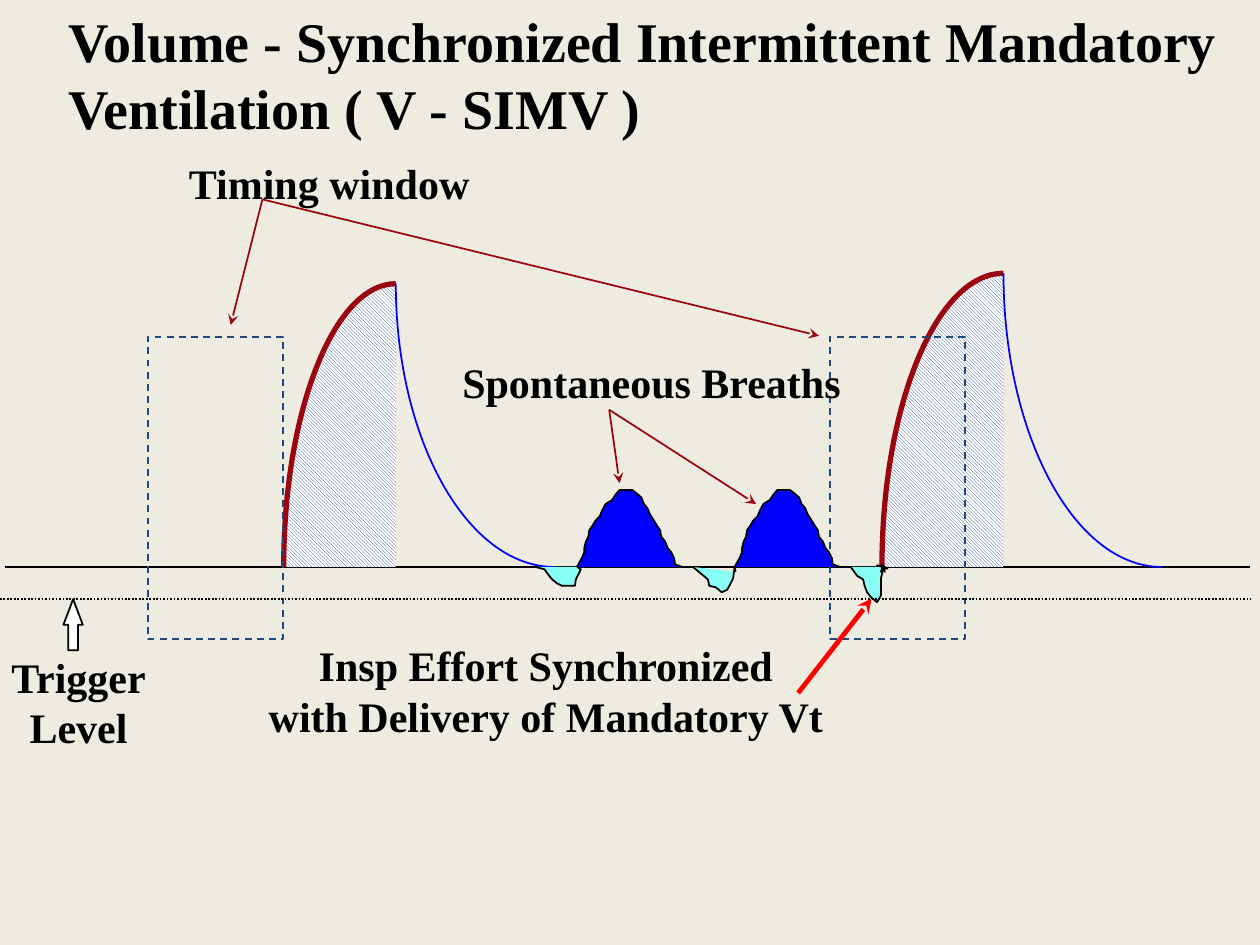
from lxml import etree
from pptx import Presentation
from pptx.dml.color import RGBColor
from pptx.enum.dml import MSO_LINE, MSO_PATTERN
from pptx.enum.shapes import MSO_CONNECTOR, MSO_SHAPE
from pptx.enum.text import MSO_ANCHOR, MSO_AUTO_SIZE, PP_ALIGN
from pptx.oxml import parse_xml
from pptx.oxml.ns import nsdecls, qn
from pptx.util import Cm, Pt

LEFT, CENTER = PP_ALIGN.LEFT, PP_ALIGN.CENTER
TOP = MSO_ANCHOR.TOP
FIT_SHAPE = MSO_AUTO_SIZE.SHAPE_TO_FIT_TEXT
DASH, DOTS = MSO_LINE.DASH, MSO_LINE.ROUND_DOT
HATCH = MSO_PATTERN.LIGHT_DOWNWARD_DIAGONAL
STRAIGHT = MSO_CONNECTOR.STRAIGHT
RECT, UP_ARROW = MSO_SHAPE.RECTANGLE, MSO_SHAPE.UP_ARROW

COLORS = {
    "background": "EEECE1", "black": "000000", "white": "FFFFFF",
    "dark_red": "9A0510", "red": "FF0000", "blue": "0000FF",
    "navy": "1F497D", "cyan": "88FFF4",
}
FONT = "Times New Roman"
BASELINE, TRIGGER = 11.43, 12.07

INSPIRATION = [(0, 100), (0, 45), (45, 0), (100, 0)]
EXPIRATION = [(100, 100), (45, 100), (0, 55), (0, 0)]

SPONTANEOUS_STARTS = (11.63, 14.81)
SPONTANEOUS = [
    (0, 0), (.1, -.18), (.15, -.3), (.15, -.38), (.18, -.51), (.23, -.61),
    (.25, -.74), (.3, -.81), (.38, -.94), (.46, -1.02), (.51, -1.14),
    (.58, -1.27), (.71, -1.35), (.79, -1.47), (.86, -1.55), (.99, -1.55),
    (1.12, -1.55), (1.22, -1.47), (1.3, -1.4), (1.35, -1.27), (1.42, -1.19),
    (1.47, -1.07), (1.55, -.94), (1.63, -.81), (1.68, -.74), (1.7, -.61),
    (1.78, -.51), (1.83, -.38), (1.9, -.3), (1.96, -.18), (1.98, -.05),
    (2.13, 0),
]
EFFORTS = {
    10.8: [(0, 0), (.18, .05), (.25, .15), (.33, .25), (.43, .33), (.53, .38),
           (.66, .38), (.79, .38), (.81, .25), (.86, .15), (.91, .05),
           (.84, 0)],
    13.97: [(0, 0), (.18, .15), (.3, .25), (.33, .38), (.46, .41), (.58, .51),
            (.69, .46), (.76, .33), (.81, .23), (.84, 0), (.86, .1)],
    17.15: [(0, 0), (.13, .18), (.25, .25), (.28, .38), (.33, .51),
            (.41, .61), (.53, .71), (.61, .58), (.61, .46), (.61, .33),
            (.61, .23), (.64, .1), (.64, 0), (.69, .1), (.64, 0), (.61, .1),
            (.64, 0), (.53, -.03), (.64, -.03), (.74, .03), (.64, .05),
            (.64, 0)],
}


def rgb(name):
    return RGBColor.from_string(COLORS[name])


def style_line(line, color, width=1, dash=None):
    line.color.rgb = rgb(color)
    line.width = Pt(width)
    if dash:
        line.dash_style = dash


def style_shape(sp, fill, color, width=1, dash=None):
    sp.shadow.inherit = False
    if fill:
        sp.fill.solid()
        sp.fill.fore_color.rgb = rgb(fill)
    else:
        sp.fill.background()
    style_line(sp.line, color, width, dash)


def write_text(tf, lines, size, align):
    settings = {"word_wrap": False, "auto_size": FIT_SHAPE,
                "vertical_anchor": TOP}
    for name, value in settings.items():
        setattr(tf, name, value)
    font = {"name": FONT, "size": Pt(size), "bold": True}
    for i, text in enumerate(lines):
        p = tf.paragraphs[0] if i == 0 else tf.add_paragraph()
        p.alignment = align
        r = p.add_run()
        r.text = text
        r.font.color.rgb = rgb("black")
        for name, value in font.items():
            setattr(r.font, name, value)


def add_title(s, box, lines):
    sp = s.shapes.title
    for name, value in zip(("left", "top", "width", "height"), box):
        setattr(sp, name, Cm(value))
    write_text(sp.text_frame, lines, 32, LEFT)


def add_label(s, box, lines, align=LEFT):
    sp = s.shapes.add_textbox(*map(Cm, box))
    write_text(sp.text_frame, lines, 24, align)


def add_box(s, kind, box, fill, color, dash=None):
    sp = s.shapes.add_shape(kind, *map(Cm, box))
    style_shape(sp, fill, color, dash=dash)
    return sp


def add_line(s, start, end, color, width=1, dash=None, arrow=False):
    sp = s.shapes.add_connector(STRAIGHT, *map(Cm, (*start, *end)))
    style_line(sp.line, color, width, dash)
    sp_pr = sp._element.spPr
    if arrow:
        etree.SubElement(sp_pr.find(qn("a:ln")), qn("a:tailEnd"),
                         type="stealth")
    etree.SubElement(sp_pr, qn("a:effectLst"))


def add_outline(s, points, fill, color, width=1):
    points = [(Cm(x), Cm(y)) for x, y in points]
    builder = s.shapes.build_freeform(*points[0])
    builder.add_line_segments(points[1:], close=False)
    sp = builder.convert_to_shape()
    style_shape(sp, fill, color, width)
    return sp


def add_wave(s, start, offsets, fill):
    add_outline(s, [(start + x, BASELINE + y) for x, y in offsets],
                fill, "black")


def curve_path(points, flags, ending=""):
    first, *rest = [f'<a:pt x="{x}" y="{y}"/>' for x, y in points]
    return parse_xml(
        f'<a:path {nsdecls("a")} w="100" h="100" {flags}>'
        f'<a:moveTo>{first}</a:moveTo>'
        f'<a:cubicBezTo>{"".join(rest)}</a:cubicBezTo>{ending}</a:path>')


def add_curve(s, left, top, width, points, color, weight, hatched=False):
    sp = add_outline(s, [(left, top), (left + width, BASELINE)],
                     None, color, weight)
    paths = sp._element.find(".//" + qn("a:pathLst"))
    paths.remove(paths[0])
    paths.append(curve_path(points, 'fill="none"'))
    if hatched:
        corner = '<a:lnTo><a:pt x="100" y="100"/></a:lnTo><a:close/>'
        paths.append(curve_path(points, 'stroke="0"', corner))
        sp.fill.patterned()
        sp.fill.pattern = HATCH
        sp.fill.fore_color.rgb = rgb("navy")
        sp.fill.back_color.rgb = rgb("white")


def add_mandatory_breath(s, left, top, rise, fall):
    add_curve(s, left, top, rise, INSPIRATION, "dark_red", 3, hatched=True)
    add_curve(s, left + rise, top, fall, EXPIRATION, "blue", 1)


def main():
    prs = Presentation()
    prs.slide_width, prs.slide_height = Cm(25.4), Cm(19.05)
    s = prs.slides.add_slide(prs.slide_layouts[5])
    s.background.fill.solid()
    s.background.fill.fore_color.rgb = rgb("background")

    add_line(s, (0.1, BASELINE), (25.2, BASELINE), "black")
    add_mandatory_breath(s, 5.72, 5.72, 2.26, 3.2)
    add_mandatory_breath(s, 17.78, 5.51, 2.45, 3.19)
    for left in (2.98, 16.73):
        add_box(s, RECT, (left, 6.79, 2.72, 6.1), None, "navy", DASH)
    for start, offsets in EFFORTS.items():
        add_wave(s, start, offsets, "cyan")
    for start in SPONTANEOUS_STARTS:
        add_wave(s, start, SPONTANEOUS, "blue")

    add_label(s, (3.56, 3.05, 6.22, 1.3), ["Timing window"])
    for end in ((4.65, 6.55), (16.51, 6.77)):
        add_line(s, (5.29, 4.02), end, "dark_red", arrow=True)

    add_label(s, (5.1, 12.77, 11.81, 2.31),
              ["Insp Effort Synchronized", "with Delivery of Mandatory Vt"],
              CENTER)
    add_line(s, (16.09, 13.97), (17.57, TRIGGER), "red", 2.75, arrow=True)

    add_line(s, (0, TRIGGER), (25.2, TRIGGER), "black", dash=DOTS)
    add_label(s, (-0.03, 13, 3.23, 2.31), ["Trigger", "Level"], CENTER)
    marker = add_box(s, UP_ARROW, (1.28, 12.08, 0.39, 1.03), "white", "black")
    marker.adjustments[1] = 1.32

    add_label(s, (9.07, 7.07, 8.23, 1.3), ["Spontaneous Breaths"])
    for end in ((12.49, 9.74), (15.24, 10.16)):
        add_line(s, (12.28, 8.26), end, "dark_red", arrow=True)

    add_title(s, (1.12, 0, 23.88, 3),
              ["Volume - Synchronized Intermittent Mandatory",
               "Ventilation ( V - SIMV )"])
    prs.save("out.pptx")


if __name__ == "__main__":
    main()
